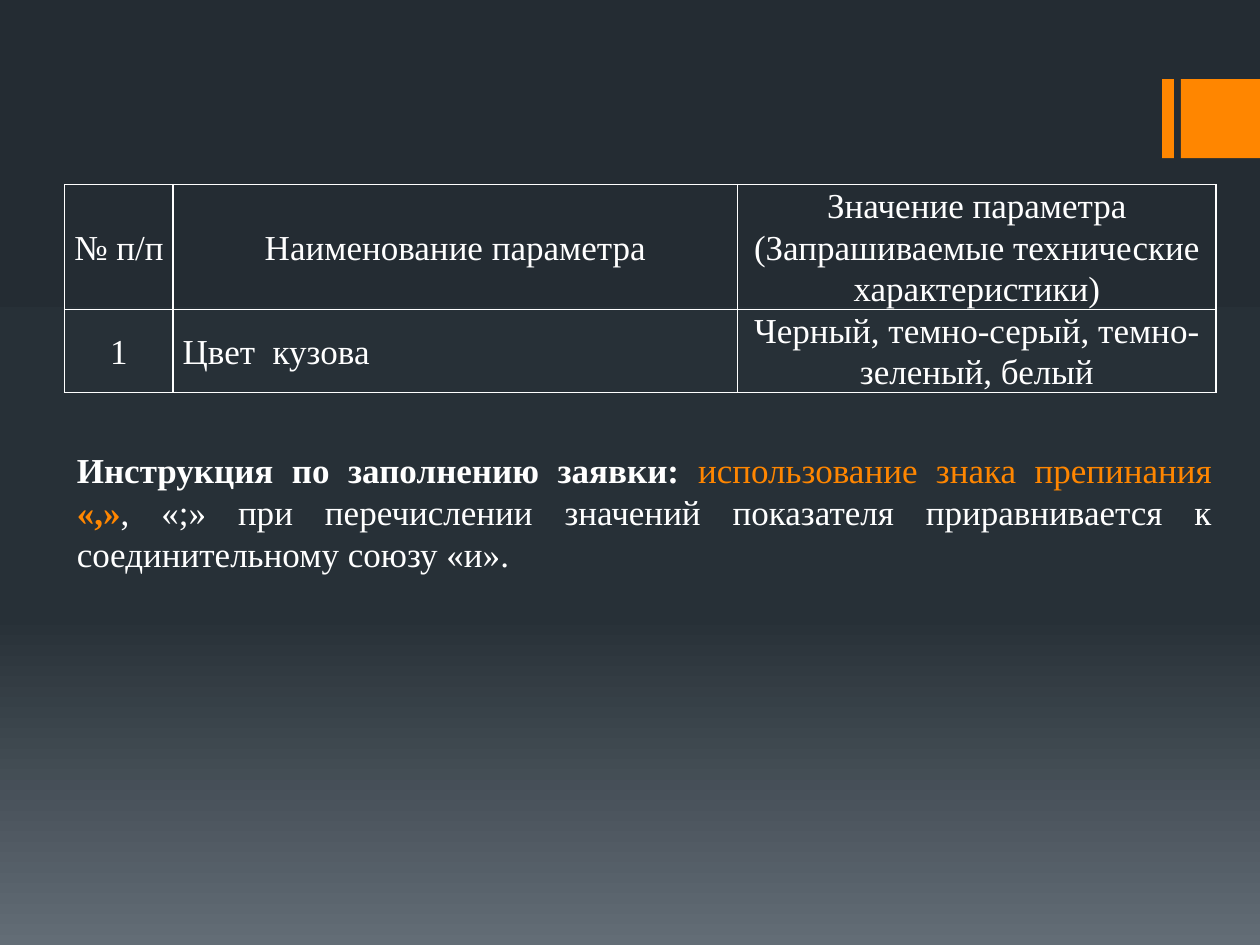
from copy import deepcopy

from pptx import Presentation
from pptx.dml.color import RGBColor
from pptx.enum.shapes import MSO_SHAPE
from pptx.enum.text import MSO_ANCHOR, PP_ALIGN
from pptx.oxml import parse_xml
from pptx.oxml.ns import nsdecls, qn
from pptx.util import Pt

RECTANGLE = MSO_SHAPE.RECTANGLE
MIDDLE = MSO_ANCHOR.MIDDLE
LEFT, CENTER, JUSTIFY = PP_ALIGN.LEFT, PP_ALIGN.CENTER, PP_ALIGN.JUSTIFY

FONT, TEXT_SIZE = "Times New Roman", 20
WHITE, ORANGE = "FFFFFF", "FF8600"
GRADIENT = [(0, "242C33"), (0.65, "273037"), (1, "636D76")]

COLUMN_WIDTHS = [62, 322.5, 273.5]
ROW_HEIGHTS = [71, 47]
ROWS = [
    ["№ п/п", "Наименование параметра",
     "Значение параметра (Запрашиваемые технические характеристики)"],
    ["1", "Цвет  кузова", "Черный, темно-серый, темно-зеленый, белый"],
]
# Text, colour, bold
INSTRUCTION = [
    ("Инструкция по заполнению заявки: ", WHITE, True),
    ("использование знака препинания ", ORANGE, False),
    ("«,»", ORANGE, True),
    (", «;» при перечислении значений показателя приравнивается "
     "к соединительному союзу «и».", WHITE, False),
]


def color(hex_value):
    return RGBColor.from_string(hex_value)


def set_font(font):
    font.name = FONT
    font.size = Pt(TEXT_SIZE)
    font.color.rgb = color(WHITE)


def paint_background(slide):
    fill = slide.background.fill
    fill.gradient()
    fill.gradient_angle = 270
    # A new gradient has two stops, so one more is added
    stop_list = slide.element.find(".//" + qn("a:gsLst"))
    stop_list.append(deepcopy(stop_list[-1]))
    for stop, (position, hex_value) in zip(fill.gradient_stops, GRADIENT):
        stop.position = position
        stop.color.rgb = color(hex_value)


def add_corner_mark(slide, left, top, width, height):
    # A narrow bar, a gap and a square that ends at the slide edge
    bar_width = 6.8
    for x, part_width in ((left, bar_width), (left + width - height, height)):
        shape = slide.shapes.add_shape(
            RECTANGLE, Pt(x), Pt(top), Pt(part_width), Pt(height))
        shape.shadow.inherit = False
        shape.fill.solid()
        shape.fill.fore_color.rgb = color(ORANGE)
        shape.line.fill.background()


def add_borders(cell):
    properties = cell._tc.get_or_add_tcPr()
    for index, side in enumerate(("lnL", "lnR", "lnT", "lnB")):
        properties.insert(index, parse_xml(
            f'<a:{side} {nsdecls("a")} w="{Pt(1)}"><a:solidFill>'
            f'<a:srgbClr val="{WHITE}"/></a:solidFill></a:{side}>'))


def add_parameter_table(slide, left, top):
    table = slide.shapes.add_table(
        len(ROWS), len(COLUMN_WIDTHS), Pt(left), Pt(top),
        Pt(sum(COLUMN_WIDTHS)), Pt(sum(ROW_HEIGHTS))).table
    table.first_row = table.horz_banding = False
    for column, width in zip(table.columns, COLUMN_WIDTHS):
        column.width = Pt(width)
    for row_index, (row, height) in enumerate(zip(table.rows, ROW_HEIGHTS)):
        row.height = Pt(height)
        for column_index, cell in enumerate(row.cells):
            cell.text = ROWS[row_index][column_index]
            cell.vertical_anchor = MIDDLE
            cell.margin_left = cell.margin_right = Pt(5.4)
            cell.margin_top = cell.margin_bottom = 0
            cell.fill.background()
            add_borders(cell)
            paragraph = cell.text_frame.paragraphs[0]
            is_name = row_index > 0 and column_index == 1
            paragraph.alignment = LEFT if is_name else CENTER
            paragraph.line_spacing = 1.07
            set_font(paragraph.font)


def add_instruction(slide, left, top, width, height):
    box = slide.shapes.add_textbox(Pt(left), Pt(top), Pt(width), Pt(height))
    box.text_frame.word_wrap = True
    paragraph = box.text_frame.paragraphs[0]
    paragraph.alignment = JUSTIFY
    set_font(paragraph.font)
    for text, hex_value, bold in INSTRUCTION:
        run = paragraph.add_run()
        run.text = text
        run.font.bold = bold
        run.font.color.rgb = color(hex_value)


def main():
    presentation = Presentation()
    presentation.slide_width, presentation.slide_height = Pt(720), Pt(540)
    slide = presentation.slides.add_slide(presentation.slide_layouts[6])
    paint_background(slide)
    add_corner_mark(slide, 664.1, 45.2, 55.9, 45.2)
    add_parameter_table(slide, 37, 105.5)
    add_instruction(slide, 36.8, 252.7, 663, 80)
    presentation.save("out.pptx")


if __name__ == "__main__":
    main()
